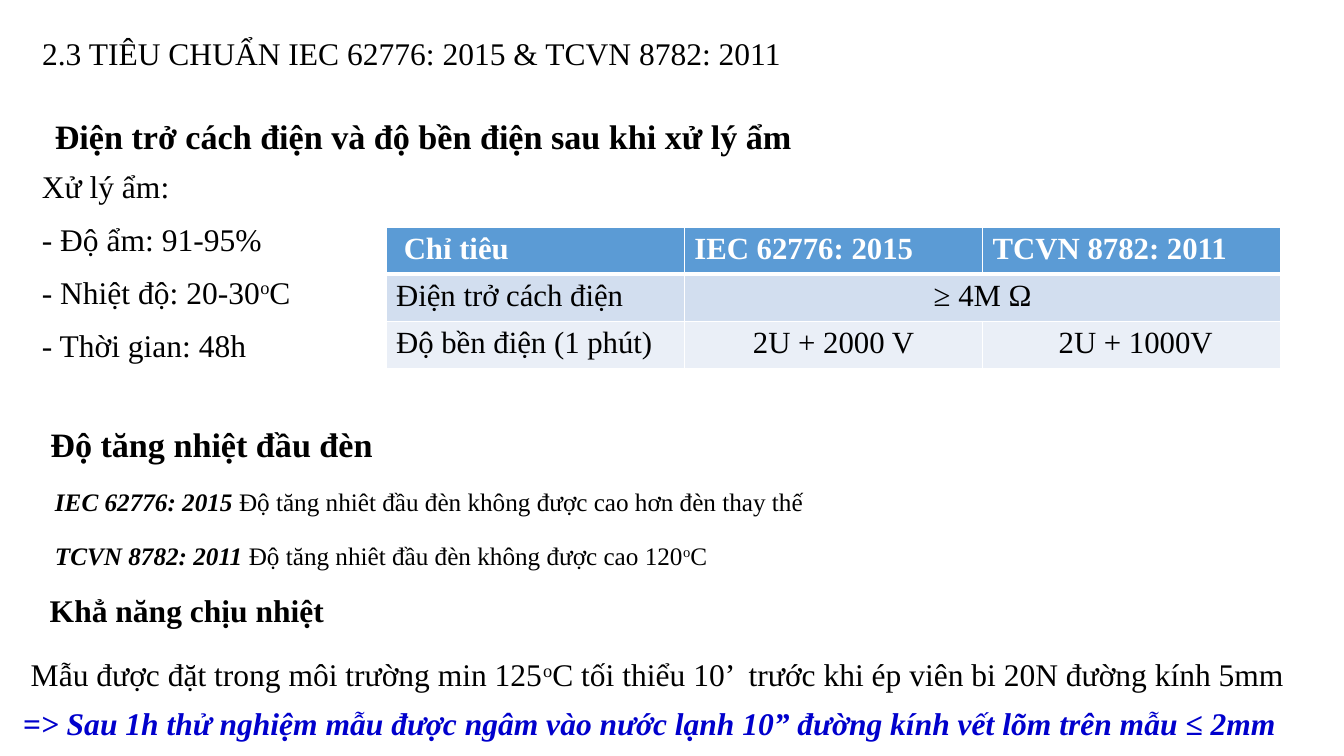
"""Build the slide on moisture, temperature rise and heat resistance tests."""
from lxml import etree
from pptx import Presentation
from pptx import util as u
from pptx.dml.color import RGBColor
from pptx.enum import text
from pptx.oxml import ns

PX = 914400 / 100.8
FONT = "Times New Roman"
BLACK, WHITE, BLUE = "000000", "FFFFFF", "0000CC"
HEADER, BAND_DARK, BAND_LIGHT = "5B9BD5", "D2DEEF", "EAEFF7"
STRONG, SUPER = "strong", "super"
CRITERIA = [
    [" Chỉ tiêu", "IEC 62776: 2015", "TCVN 8782: 2011"],
    ["Điện trở cách điện", "≥ 4M Ω", ""],
    ["Độ bền điện (1 phút)", "2U + 2000 V", " 2U + 1000V"],
]


def px(length):
    """Turn pixels into EMU."""
    return u.Emu(round(length * PX))


def color(value):
    """Turn a hex string into a colour."""
    return RGBColor.from_string(value)


def write(paragraph, runs, size, ink=BLACK, bold=False, italic=False, spacing=None):
    """Fill a paragraph with (text, style) runs."""
    paragraph.line_spacing = spacing
    font = paragraph.font
    font.name, font.size, font.color.rgb = FONT, u.Pt(size), color(ink)
    font.bold, font.italic = bold, italic
    for words, style in runs:
        run = paragraph.add_run()
        run.text = words
        if style == STRONG:
            run.font.bold = run.font.italic = True
        elif style == SUPER:
            run.font._element.set("baseline", "30000")


def add_text(slide, box, lines, size, **look):
    """Add a wrapped text box with one paragraph per line."""
    frame = slide.shapes.add_textbox(*map(px, box)).text_frame
    frame.word_wrap = True
    for index, runs in enumerate(lines):
        paragraph = frame.add_paragraph() if index else frame.paragraphs[0]
        write(paragraph, runs, size, **look)
    return frame


def add_heading(slide, box, words, size, spacing):
    """Add a bold section heading."""
    add_text(slide, box, [[(words, None)]], size, bold=True, spacing=spacing)


def set_title(slide, words):
    """Place and format the slide title."""
    title = slide.shapes.title
    title.left, title.top, title.width, title.height = map(px, (32, 17, 924, 52))
    frame = title.text_frame
    frame.auto_size = text.MSO_AUTO_SIZE.NONE
    frame.vertical_anchor = text.MSO_ANCHOR.MIDDLE
    heading = frame.paragraphs[0]
    heading.alignment = text.PP_ALIGN.LEFT
    write(heading, [(words, None)], 22.5, spacing=1.5)


def set_borders(cell, bottom):
    """Draw white cell borders, with the bottom width in points."""
    properties = cell._tc.get_or_add_tcPr()
    for index, (side, width) in enumerate(
            [("lnL", 1), ("lnR", 1), ("lnT", 1), ("lnB", bottom)]):
        line = etree.Element(ns.qn(f"a:{side}"), w=str(u.Pt(width)))
        fill = etree.SubElement(line, ns.qn("a:solidFill"))
        etree.SubElement(fill, ns.qn("a:srgbClr"), val=WHITE)
        properties.insert(index, line)


def add_criteria_table(slide):
    """Add the table comparing both standards."""
    table = slide.shapes.add_table(3, 3, *map(px, (386, 227, 895, 123))).table
    for row, fill in enumerate([HEADER, BAND_DARK, BAND_LIGHT]):
        for column, words in enumerate(CRITERIA[row]):
            cell = table.cell(row, column)
            cell.fill.solid()
            cell.fill.fore_color.rgb = color(fill)
            set_borders(cell, 1 if row else 3)
            paragraph = cell.text_frame.paragraphs[0]
            if row and column:
                paragraph.alignment = text.PP_ALIGN.CENTER
            runs = [(words, None)] if words else []
            write(paragraph, runs, 22, BLACK if row else WHITE, bold=not row)
    table.cell(1, 1).merge(table.cell(1, 2))


def main():
    """Build and save the slide."""
    deck = Presentation()
    deck.slide_width, deck.slide_height = px(1344), px(756)
    slide = deck.slides.add_slide(deck.slide_layouts[5])
    set_title(slide, "2.3 TIÊU CHUẨN IEC 62776: 2015 & TCVN 8782: 2011")

    add_heading(slide, (45, 94, 788, 70),
                "Điện trở cách điện và độ bền điện sau khi xử lý ẩm", 24.4, 1.4)
    add_text(slide, (32, 147, 324, 237), [
        [("Xử lý ẩm:", None)],
        [("- Độ ẩm: 91-95%", None)],
        [("- Nhiệt độ: 20-30", None), ("o", SUPER), ("C", None)],
        [("- Thời gian: 48h", None)],
    ], 22.5, spacing=1.4)
    add_criteria_table(slide)

    add_heading(slide, (32, 402, 417, 70), " Độ tăng nhiệt đầu đèn", 24.4, 1.4)
    limits = [
        [("IEC 62776: 2015 ", STRONG),
         ("Độ tăng nhiêt đầu đèn không được cao hơn đèn thay thế", None)],
        [("TCVN 8782: 2011 ", STRONG),
         ("Độ tăng nhiêt đầu đèn không được cao 120", None),
         ("o", SUPER), ("C", None)],
    ]
    for index, limit in enumerate(limits):
        add_text(slide, (45, 481 + 54 * index, 835, 40), [limit], 18)

    add_heading(slide, (32, 575, 417, 62), " Khẳ năng chịu nhiệt", 22.5, 1.3)
    conclusion = add_text(slide, (13, 639, 1315, 117), [
        [(" Mẫu được đặt trong môi trường min 125", None), ("o", SUPER),
         ("C tối thiểu 10’  trước khi ép viên bi 20N đường kính 5mm", None)],
    ], 22.5, spacing=1.3).add_paragraph()
    write(conclusion, [("=> Sau 1h thử nghiệm mẫu được ngâm vào nước lạnh 10” "
                        "đường kính vết lõm trên mẫu ≤ 2mm", None)],
          22.5, BLUE, bold=True, italic=True, spacing=1.3)
    deck.save("out.pptx")


if __name__ == "__main__":
    main()
